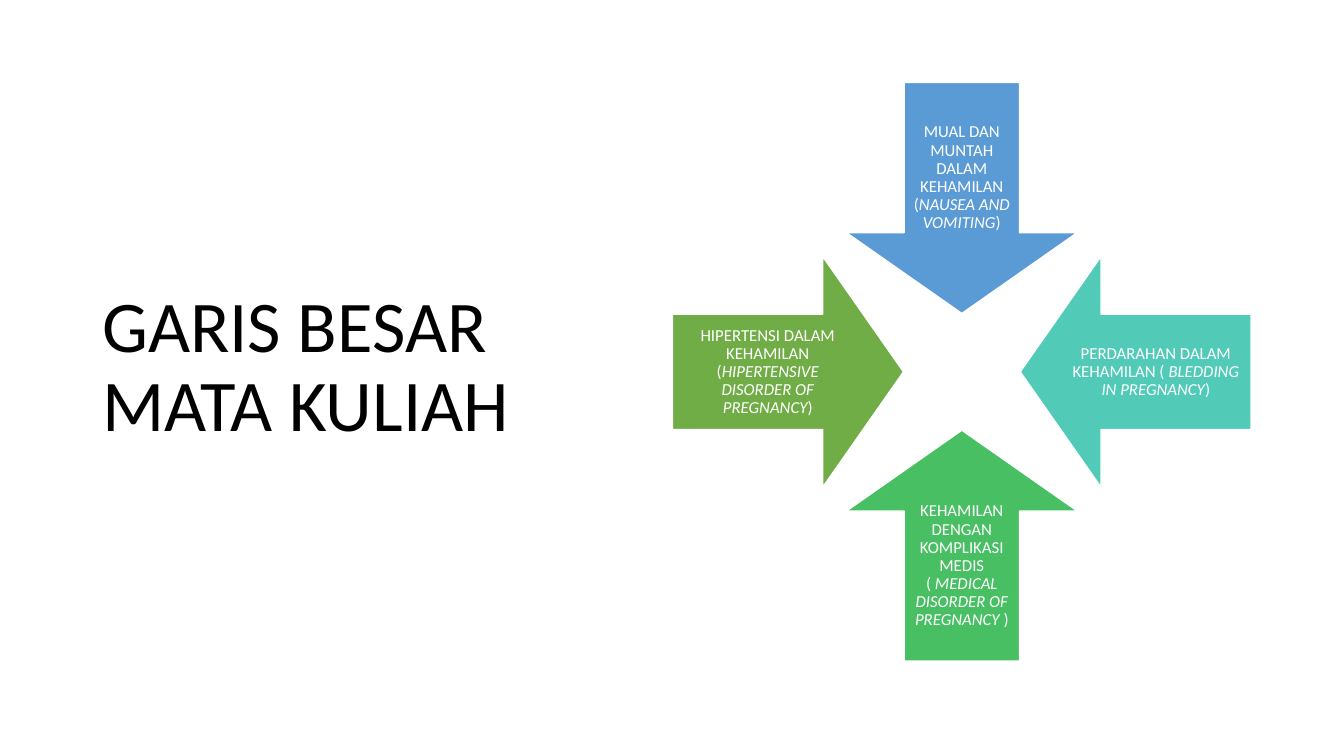
from typing import NamedTuple

from pptx import Presentation
from pptx.dml.color import RGBColor
from pptx.enum.shapes import MSO_SHAPE as Preset
from pptx.enum.text import MSO_ANCHOR as Anchor, PP_ALIGN as Align
from pptx.slide import Slide
from pptx.text.text import _Run as Run
from pptx.util import Cm, Pt

WHITE = RGBColor(0xFF, 0xFF, 0xFF)
BLACK = RGBColor(0x00, 0x00, 0x00)
BLUE = RGBColor(0x5B, 0x9B, 0xD5)
TEAL = RGBColor(0x52, 0xCA, 0xB8)
GREEN = RGBColor(0x49, 0xBF, 0x64)
OLIVE = RGBColor(0x70, 0xAD, 0x47)
FONT = "Calibri"

# Ring of arrows, in centimetres
MID_X, MID_Y = 24.24, 9.37
SIZE = 5.82
REACH = 4.38  # ring centre to arrow centre
TEXT_REACH = 4.89  # ring centre to label centre
SHORT, LONG = 2.92, 4.8  # label sides
INSET = 0.23


class Arrow(NamedTuple):
    dx: int
    dy: int
    turn: int
    color: RGBColor
    topic: str
    term: str


ARROWS = [
    Arrow(0, -1, 0, BLUE, "MUAL DAN MUNTAH DALAM KEHAMILAN (", "NAUSEA AND VOMITING"),
    Arrow(1, 0, 90, TEAL, "PERDARAHAN DALAM KEHAMILAN ( ", "BLEDDING IN PREGNANCY"),
    Arrow(0, 1, 180, GREEN, "KEHAMILAN DENGAN KOMPLIKASI MEDIS ( ",
          "MEDICAL DISORDER OF PREGNANCY "),
    Arrow(-1, 0, 270, OLIVE, "HIPERTENSI DALAM KEHAMILAN (",
          "HIPERTENSIVE DISORDER OF PREGNANCY"),
]


def style(run: Run, size: int, color: RGBColor, slant: bool = False) -> None:
    font = run.font
    font.name, font.size, font.italic = FONT, Pt(size), slant
    font.color.rgb = color


def add_title(slide: Slide, text: str) -> None:
    frame = slide.shapes.add_textbox(Cm(2.33), Cm(1.55), Cm(13.51), Cm(15.47)).text_frame
    frame.word_wrap = True
    frame.vertical_anchor = Anchor.MIDDLE
    frame.text = text
    line = frame.paragraphs[0]
    line.line_spacing = 0.9
    style(line.runs[0], 52, BLACK)


def add_arrow(slide: Slide, arrow: Arrow) -> None:
    left = MID_X + arrow.dx * REACH - SIZE / 2
    top = MID_Y + arrow.dy * REACH - SIZE / 2
    shape = slide.shapes.add_shape(Preset.DOWN_ARROW, Cm(left), Cm(top), Cm(SIZE), Cm(SIZE))
    shape.adjustments[0], shape.adjustments[1] = 0.5, 0.35
    shape.rotation = arrow.turn
    shape.shadow.inherit = False
    shape.fill.solid()
    shape.fill.fore_color.rgb = arrow.color
    shape.line.color.rgb = WHITE
    shape.line.width = Pt(1)


def add_label(slide: Slide, arrow: Arrow) -> None:
    wide, high = (LONG, SHORT) if arrow.dx else (SHORT, LONG)
    left = MID_X + arrow.dx * TEXT_REACH - wide / 2
    top = MID_Y + arrow.dy * TEXT_REACH - high / 2
    frame = slide.shapes.add_textbox(Cm(left), Cm(top), Cm(wide), Cm(high)).text_frame
    frame.word_wrap = True
    frame.vertical_anchor = Anchor.MIDDLE
    frame.margin_left = frame.margin_right = Cm(INSET)
    frame.margin_top = frame.margin_bottom = Cm(INSET)
    line = frame.paragraphs[0]
    line.text = arrow.topic
    for part in (arrow.term, ")"):
        line.add_run().text = part
    line.alignment = Align.CENTER
    line.line_spacing = 0.9
    for run in line.runs:
        style(run, 12, WHITE, run.text == arrow.term)


def main() -> None:
    deck = Presentation()
    deck.slide_width, deck.slide_height = Cm(33.87), Cm(19.05)
    slide = deck.slides.add_slide(deck.slide_layouts[6])

    # Title on the left
    add_title(slide, "GARIS BESAR MATA KULIAH")

    # Four arrows that point to the middle
    for arrow in ARROWS:
        add_arrow(slide, arrow)
        add_label(slide, arrow)

    deck.save("out.pptx")


if __name__ == "__main__":
    main()
